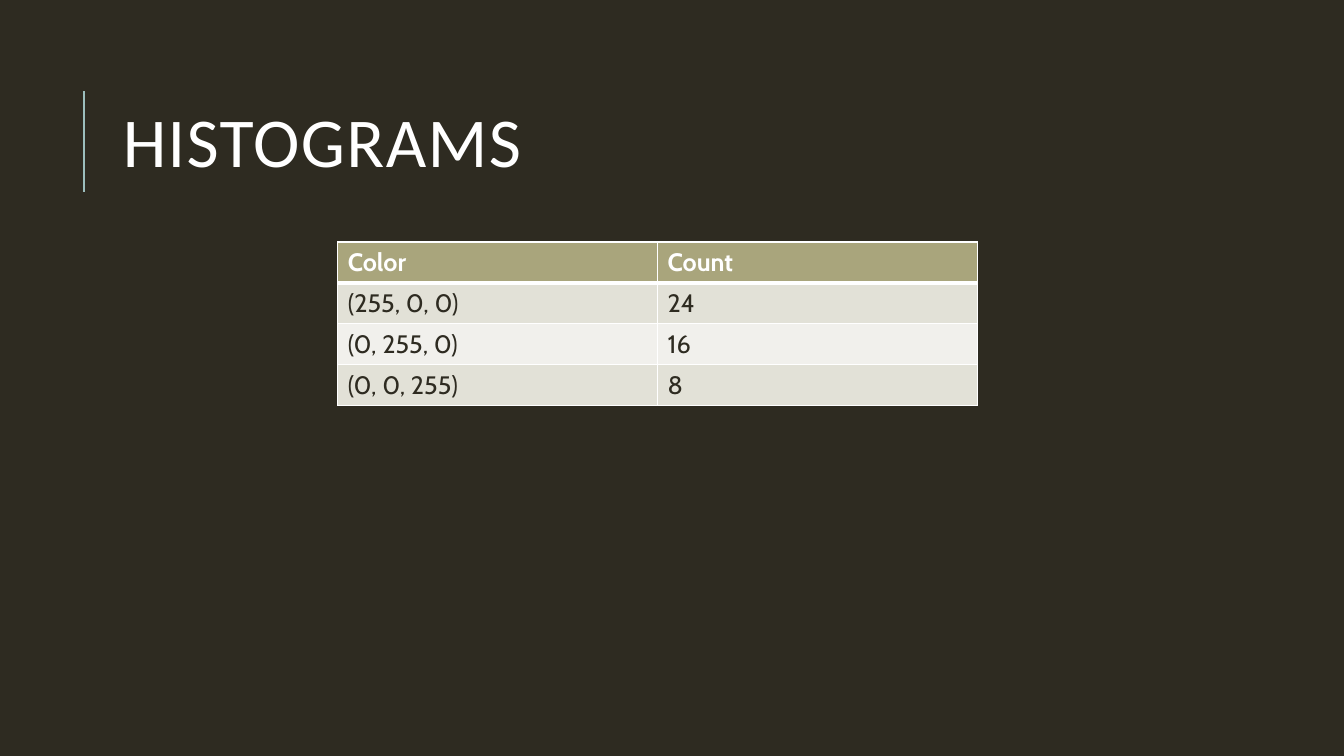
from dataclasses import dataclass

from lxml.etree import SubElement
from pptx import Presentation
from pptx.dml.color import RGBColor as RGB
from pptx.enum.shapes import MSO_CONNECTOR as CONN
from pptx.enum.text import MSO_ANCHOR as ANCHOR, MSO_AUTO_SIZE as AUTO, PP_ALIGN as ALIGN
from pptx.oxml.ns import qn
from pptx.util import Cm, Pt


@dataclass(frozen=True)
class Theme:
    dark: str = "2E2B21"
    light: str = "FFFFFF"
    accent: str = "9CBEBD"
    header: str = "A9A57C"
    bands: tuple = ("E2E1D7", "F1F0EC")
    title_font: str = "Calibri"
    body_font: str = "Cabin"
    title_size: int = 50
    body_size: int = 18
    rule_width: float = 1.5
    grid_width: int = 1
    header_line_width: int = 3


THEME = Theme()
ROWS = [
    ("Color", "Count"),
    ("(255, 0, 0)", "24"),
    ("(0, 255, 0)", "16"),
    ("(0, 0, 255)", "8"),
]


def set_attrs(obj, values):
    for name, value in values.items():
        setattr(obj, name, value)


def format_run(r, color, **font):
    set_attrs(r.font, font)
    r.font.color.rgb = RGB.from_string(color)


def add_title(s, text):
    sp = s.shapes.title
    set_attrs(sp, {"left": Cm(2.84), "top": Cm(1.63), "width": Cm(27), "height": Cm(4.17)})
    tf = sp.text_frame
    set_attrs(tf, {"word_wrap": True, "auto_size": AUTO.NONE, "vertical_anchor": ANCHOR.MIDDLE})
    p = tf.paragraphs[0]
    set_attrs(p, {"alignment": ALIGN.LEFT, "line_spacing": 0.8})
    r = p.add_run()
    r.text = text
    format_run(r, THEME.light, name=THEME.title_font, size=Pt(THEME.title_size))
    r.font._element.set("spc", "100")


def add_rule(s, x, top, bottom):
    line = s.shapes.add_connector(CONN.STRAIGHT, x, bottom, x, top)
    line.line.color.rgb = RGB.from_string(THEME.accent)
    line.line.width = Pt(THEME.rule_width)
    SubElement(line._element.spPr, qn("a:effectLst"))


def add_border(cell, side, width):
    ln = SubElement(cell._tc.get_or_add_tcPr(), qn(f"a:ln{side}"), w=str(Pt(width)))
    fill = SubElement(ln, qn("a:solidFill"))
    SubElement(fill, qn("a:srgbClr"), val=THEME.light)


def format_cell(cell, text, row):
    is_header = row == 0
    # The line below the header belongs to the two rows it parts
    thick_side = {0: "B", 1: "T"}.get(row)
    for side in "LRTB":
        add_border(cell, side, THEME.header_line_width if side == thick_side else THEME.grid_width)
    cell.fill.solid()
    fill = THEME.header if is_header else THEME.bands[(row - 1) % 2]
    cell.fill.fore_color.rgb = RGB.from_string(fill)
    r = cell.text_frame.paragraphs[0].add_run()
    r.text = text
    format_run(r, THEME.light if is_header else THEME.dark,
               name=THEME.body_font, size=Pt(THEME.body_size), bold=is_header)


def add_count_table(s, rows, left, top, col_width, row_height):
    n_cols = len(rows[0])
    frame = s.shapes.add_table(len(rows), n_cols, left, top,
                               col_width * n_cols, row_height * len(rows))
    for i, values in enumerate(rows):
        for j, text in enumerate(values):
            format_cell(frame.table.cell(i, j), text, i)


def main():
    prs = Presentation()
    set_attrs(prs, {"slide_width": Cm(33.87), "slide_height": Cm(19.05)})
    s = prs.slides.add_slide(prs.slide_layouts[5])

    # Background
    s.background.fill.solid()
    s.background.fill.fore_color.rgb = RGB.from_string(THEME.dark)

    # Heading with its vertical rule
    add_rule(s, Cm(2.11), Cm(2.29), Cm(4.83))
    add_title(s, "HISTOGRAMS")

    # Colour counts
    add_count_table(s, ROWS, Cm(8.51), Cm(6.1), Cm(8.06), Cm(1.03))

    prs.save("out.pptx")


if __name__ == "__main__":
    main()
